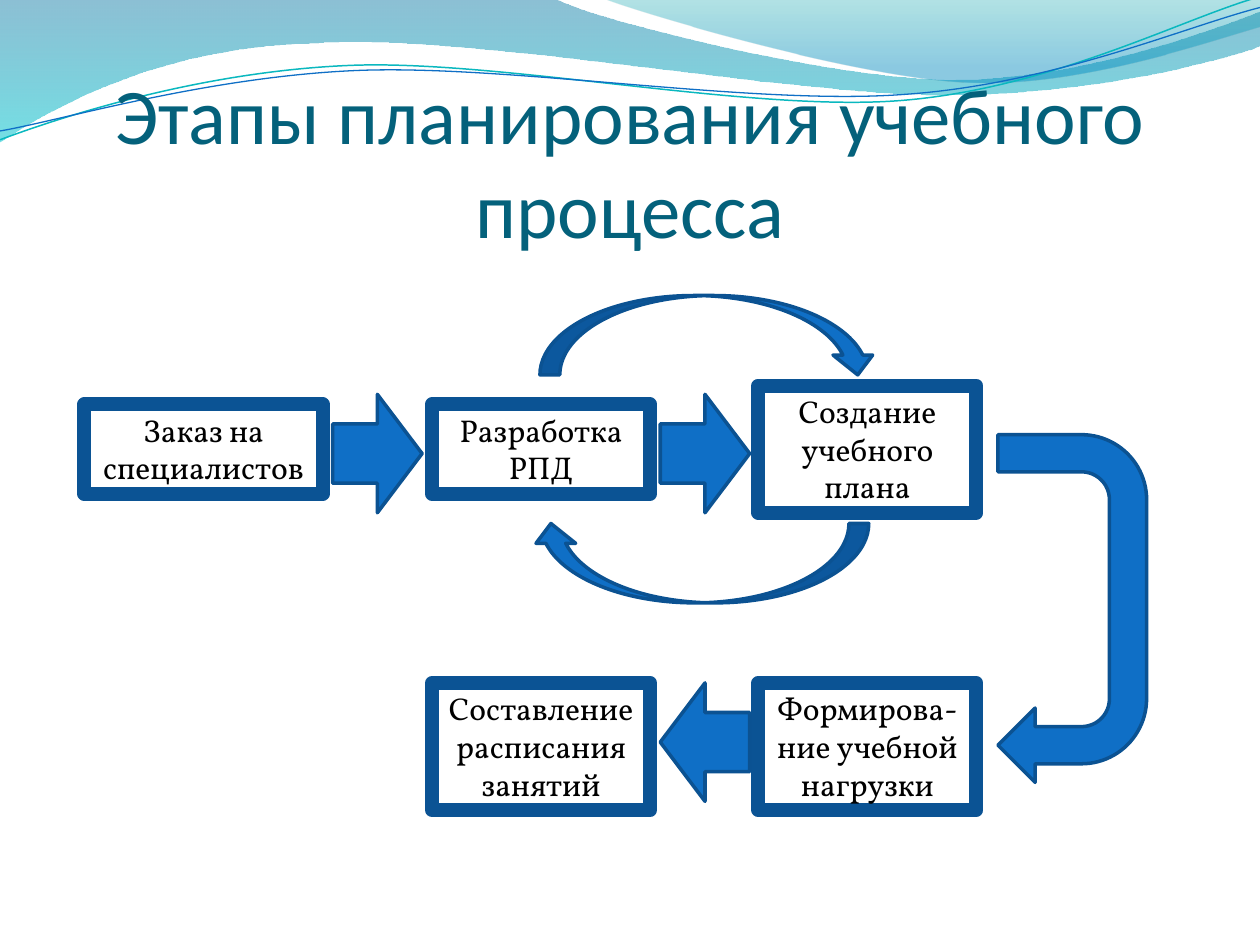
from math import cos, radians, sin

from lxml.etree import SubElement
from pptx import Presentation
from pptx.dml.color import RGBColor
from pptx.enum.shapes import MSO_SHAPE
from pptx.enum.text import MSO_ANCHOR, MSO_AUTO_SIZE, PP_ALIGN
from pptx.oxml.ns import qn
from pptx.util import Inches, Pt

THEME = {
    "title": {"font": "Calibri", "size": 45, "color": "04617B"},
    "box": {"font": "Vollkorn", "size": 18, "color": "000000"},
    "box_line": ("0B5394", 8),
    "arrow_fill": "0F6FC6",
    "arrow_line": ("0B5292", 2),
}

TITLE = "Этапы планирования учебного процесса"

COLUMNS = {"order": (0.67, 1.89), "left": (3.43, 1.73), "right": (6.02, 1.73)}
BOXES = [  # column, top, height, text
    ("left", 3.21, 0.71, "Разработка РПД"),
    ("order", 3.21, 0.71, "Заказ на специалистов"),
    ("right", 3.06, 1.01, "Создание учебного плана"),
    ("right", 5.42, 1.01, "Формирова-ние учебной нагрузки"),
    ("left", 5.42, 1.01, "Составление\vрасписания занятий"),
]

STRAIGHT, CURVED = (0.71, 0.94), (0.63, 2.68)
ARROWS = [  # shape, left, top, size, rotation, adjustments
    (MSO_SHAPE.RIGHT_ARROW, 2.64, 3.13, STRAIGHT, 0, ()),
    (MSO_SHAPE.RIGHT_ARROW, 5.24, 3.13, STRAIGHT, 0, ()),
    (MSO_SHAPE.U_TURN_ARROW, 7.13, 4.24, (2.76, 1.18), 90, (0.25, 0.25, 0.25, 0.438, 1)),
    (MSO_SHAPE.RIGHT_ARROW, 5.24, 5.42, STRAIGHT, 180, ()),
    (MSO_SHAPE.CURVED_LEFT_ARROW, 5.31, 1.32, CURVED, 270, ()),
    (MSO_SHAPE.CURVED_LEFT_ARROW, 5.24, 3.13, CURVED, 90, ()),
]

# An outline is a list of steps: one point for a line, three for a Bezier curve.
WAVES = [  # outline, gradient stops: position, colour, opacity in percent
    ([[(0, 0)], [(4.4, -0.01)], [(4.76, 0.17), (6.64, 0.63), (7.58, 0.63)],
      [(8.53, 0.63), (9.58, 0.26), (10, 0.09)], [(10.01, 0.36)],
      [(9.83, 0.44), (8.7, 0.76), (7.46, 0.75)],
      [(6.22, 0.75), (3.82, 0.28), (2.57, 0.34)],
      [(1.29, 0.36), (0.46, 0.83), (-0.01, 1.13)]],
     [(0, "0074A1", 45), (1, "00C6CF", 55)]),
    ([[(4.79, -0.01)], [(5.09, 0.11), (6.82, 0.62), (7.69, 0.65)],
      [(8.56, 0.69), (9.61, 0.32), (10, 0.21)], [(10, 0)]],
     [(0, "00A1A9", 30), (0.8, "008BBF", 45)]),
]
STRANDS = [  # outline, line
    ([[(0, 1.11)], [(0.48, 0.93), (1.58, 0.57), (2.77, 0.52)],
      [(3.95, 0.47), (5.93, 0.89), (7.13, 0.8)],
      [(8.33, 0.71), (9.38, 0.15), (9.98, -0.02)]],
     ("0AB8BF", 0.85)),
    ([[(0, 1.04)], [(0.47, 0.96), (1.64, 0.61), (2.83, 0.56)],
      [(4.03, 0.51), (5.97, 0.84), (7.17, 0.75)],
      [(8.36, 0.67), (9.41, 0.21), (10, 0.06)]],
     ("0F6FC6", 0.75)),
]
STRAND_CENTER, STRAND_TILT = (5, 0.58), 2.7


def rgb(value):
    return RGBColor.from_string(value)


def level(outline):
    """Turn a tilted strand back to the horizontal."""
    cx, cy = STRAND_CENTER
    c, d = cos(radians(STRAND_TILT)), sin(radians(STRAND_TILT))
    return [[(cx + (x - cx) * c - (y - cy) * d, cy + (x - cx) * d + (y - cy) * c)
             for x, y in step] for step in outline]


def style(sp, fill=None, line=None):
    sp.shadow.inherit = False
    if fill:
        sp.fill.solid()
        sp.fill.fore_color.rgb = rgb(fill)
    else:
        sp.fill.background()
    if line:
        sp.line.color.rgb = rgb(line[0])
        sp.line.width = Pt(line[1])
    else:
        sp.line.fill.background()


def add_outline(s, outline, closed, line=None):
    """Build a freeform through the end points, then bend its curved segments."""
    steps = [[(Inches(x), Inches(y)) for x, y in step] for step in outline]
    start, *ends = [step[-1] for step in steps]
    builder = s.shapes.build_freeform(*start)
    builder.add_line_segments(ends, close=closed)
    sp = builder.convert_to_shape()
    segments = list(sp.element.iter(qn("a:lnTo")))
    for segment, step in zip(segments, steps[1:]):
        if len(step) == 3:
            curve = segment.makeelement(qn("a:cubicBezTo"))
            for x, y in step:
                SubElement(curve, qn("a:pt"), x=str(x - sp.left), y=str(y - sp.top))
            segment.getparent().replace(segment, curve)
    style(sp, line=line)
    return sp


def fill_gradient(sp, stops):
    """Fill from top to bottom with partly transparent colours."""
    sp.fill.gradient()
    sp.fill.gradient_angle = 270
    for stop, (position, color, _) in zip(sp.fill.gradient_stops, stops):
        stop.position = position
        stop.color.rgb = rgb(color)
    colors = sp.element.spPr.findall(".//" + qn("a:gs") + "/" + qn("a:srgbClr"))
    for node, (_, _, opacity) in zip(colors, stops):
        SubElement(node, qn("a:alpha"), val=str(opacity * 1000))


def write(sp, text, font, size, color, anchor=MSO_ANCHOR.TOP, autosize=MSO_AUTO_SIZE.NONE):
    tf = sp.text_frame
    tf.word_wrap = True
    tf.auto_size = autosize
    tf.vertical_anchor = anchor
    p = tf.paragraphs[0]
    p.text = text
    p.alignment = PP_ALIGN.CENTER
    for r in p.runs:
        r.font.name = font
        r.font.size = Pt(size)
        r.font.color.rgb = rgb(color)


def add_title(s):
    title = s.shapes.title
    title.left, title.top, title.width, title.height = map(Inches, (0.5, 0.77, 9, 1.25))
    write(title, TITLE, **THEME["title"], anchor=MSO_ANCHOR.BOTTOM)
    tf = title.text_frame
    tf.margin_left = tf.margin_right = tf.margin_bottom = 0
    tf.margin_top = Inches(0.05)
    title.element.getparent().append(title.element)  # in front of the waves


def main():
    prs = Presentation()
    prs.slide_width, prs.slide_height = Inches(10), Inches(7.5)
    s = prs.slides.add_slide(prs.slide_layouts[5])

    for outline, stops in WAVES:
        fill_gradient(add_outline(s, outline, True), stops)
    for outline, line in STRANDS:
        add_outline(s, level(outline), False, line).rotation = 360 - STRAND_TILT
    add_title(s)

    for column, top, height, text in BOXES:
        left, width = COLUMNS[column]
        sp = s.shapes.add_shape(MSO_SHAPE.RECTANGLE,
                                *map(Inches, (left, top, width, height)))
        style(sp, line=THEME["box_line"])
        write(sp, text, **THEME["box"], autosize=MSO_AUTO_SIZE.SHAPE_TO_FIT_TEXT)

    for kind, left, top, size, rotation, adjustments in ARROWS:
        sp = s.shapes.add_shape(kind, *map(Inches, (left, top, *size)))
        sp.rotation = rotation
        for i, value in enumerate(adjustments):
            sp.adjustments[i] = value
        style(sp, THEME["arrow_fill"], THEME["arrow_line"])

    prs.save("out.pptx")


if __name__ == "__main__":
    main()
